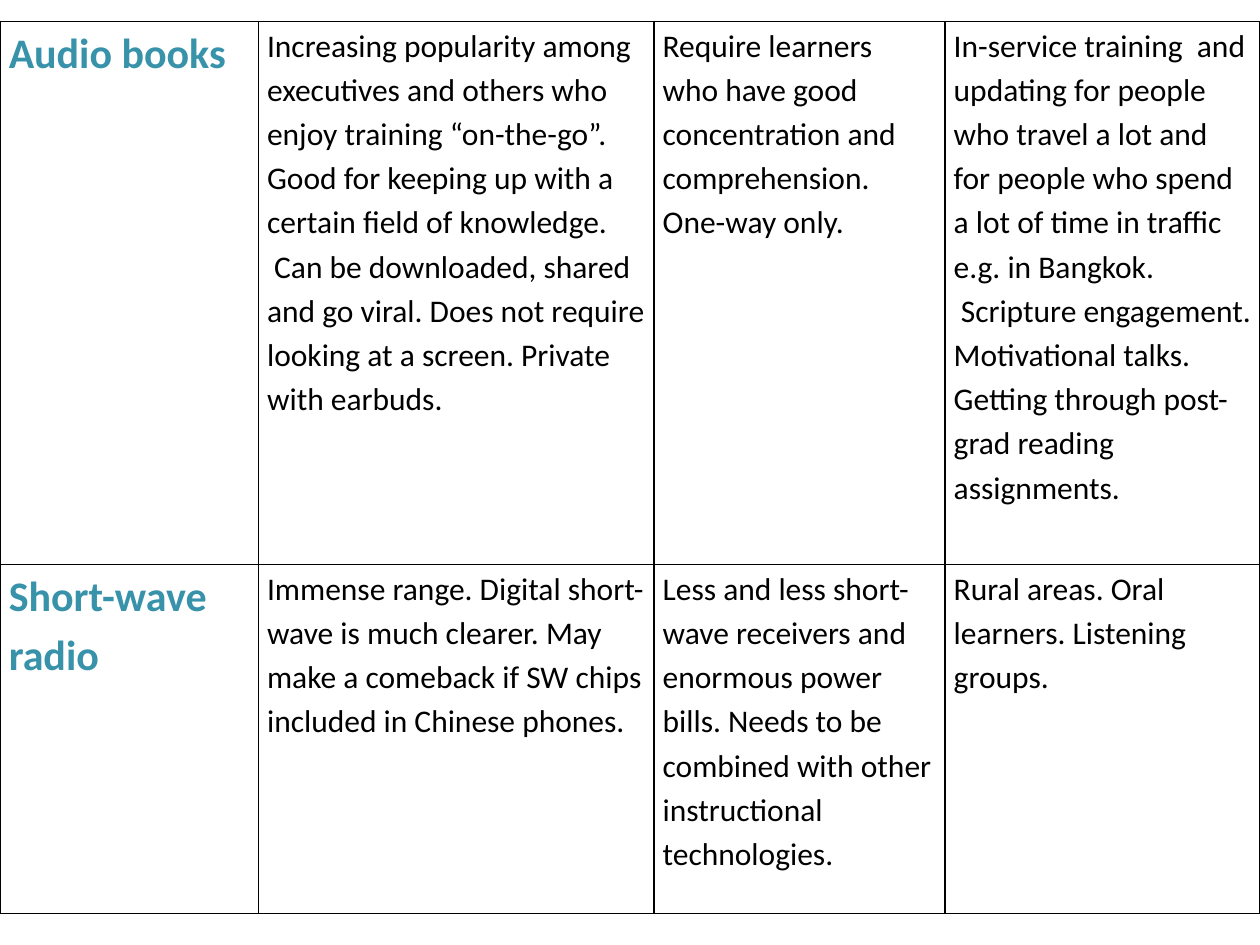
from lxml.etree import SubElement
from pptx import Presentation
from pptx.dml.color import RGBColor
from pptx.oxml.ns import qn
from pptx.util import Inches, Pt

COLORS = {"heading": "3792AA", "body": "000000", "border": "000000"}
FONT = "Calibri"
COLUMN_WIDTHS = [2.05, 3.14, 2.31, 2.5]
ROW_HEIGHTS = [4.31, 2.77]

# Technology, strengths, limits, uses; "\n" parts paragraphs, "\v" breaks a line
MEDIA_ROWS = [
    [
        "Audio books",
        "Increasing popularity among executives and others who enjoy training “on-the-go”. \v"
        "Good for keeping up with a certain field of knowledge.\v"
        " Can be downloaded, shared and go viral. Does not require looking at a screen. "
        "Private with earbuds.",
        "Require learners  who have good concentration and comprehension. One-way only.",
        "In-service training  and updating for people who travel a lot and for people "
        "who spend a lot of time in traffic e.g. in Bangkok.\n"
        " Scripture engagement.\n"
        "Motivational talks.\vGetting through post-grad reading assignments.",
    ],
    [
        "Short-wave radio",
        "Immense range. Digital short-wave is much clearer. May make a comeback if SW "
        "chips included in Chinese phones.",
        "Less and less short-wave receivers and enormous power bills. Needs to be "
        "combined with other instructional technologies.",
        "Rural areas. Oral learners. Listening groups.",
    ],
]


def add_borders(cell):
    properties = cell._tc.get_or_add_tcPr()
    for side in ("a:lnL", "a:lnR", "a:lnT", "a:lnB"):
        line = SubElement(properties, qn(side), w=str(Pt(1)))
        fill = SubElement(line, qn("a:solidFill"))
        SubElement(fill, qn("a:srgbClr"), val=COLORS["border"])


def fill_cell(cell, text, is_heading):
    add_borders(cell)
    cell.fill.background()
    cell.margin_left = cell.margin_right = Inches(0.07)
    cell.margin_top = cell.margin_bottom = 0
    cell.text_frame.text = text
    for para in cell.text_frame.paragraphs:
        para.line_spacing = 1.15
        para.font.name = FONT
        para.font.size = Pt(24 if is_heading else 18)
        para.font.bold = is_heading
        color = COLORS["heading" if is_heading else "body"]
        para.font.color.rgb = RGBColor.from_string(color)


def add_media_table(page, left, top, width, height):
    frame = page.shapes.add_table(
        len(MEDIA_ROWS), len(COLUMN_WIDTHS), left, top, width, height
    )
    table = frame.table
    table.first_row = table.horz_banding = False
    for column, share in zip(table.columns, COLUMN_WIDTHS):
        column.width = int(width * share / sum(COLUMN_WIDTHS))
    for row, share in zip(table.rows, ROW_HEIGHTS):
        row.height = int(height * share / sum(ROW_HEIGHTS))
    for row, texts in zip(table.rows, MEDIA_ROWS):
        for index, (cell, text) in enumerate(zip(row.cells, texts)):
            fill_cell(cell, text, is_heading=index == 0)


def main():
    deck = Presentation()
    deck.slide_width, deck.slide_height = Inches(10), Inches(7.5)
    page = deck.slides.add_slide(deck.slide_layouts[6])
    add_media_table(page, 0, Inches(0.17), Inches(10), Inches(7.08))
    deck.save("out.pptx")


if __name__ == "__main__":
    main()
